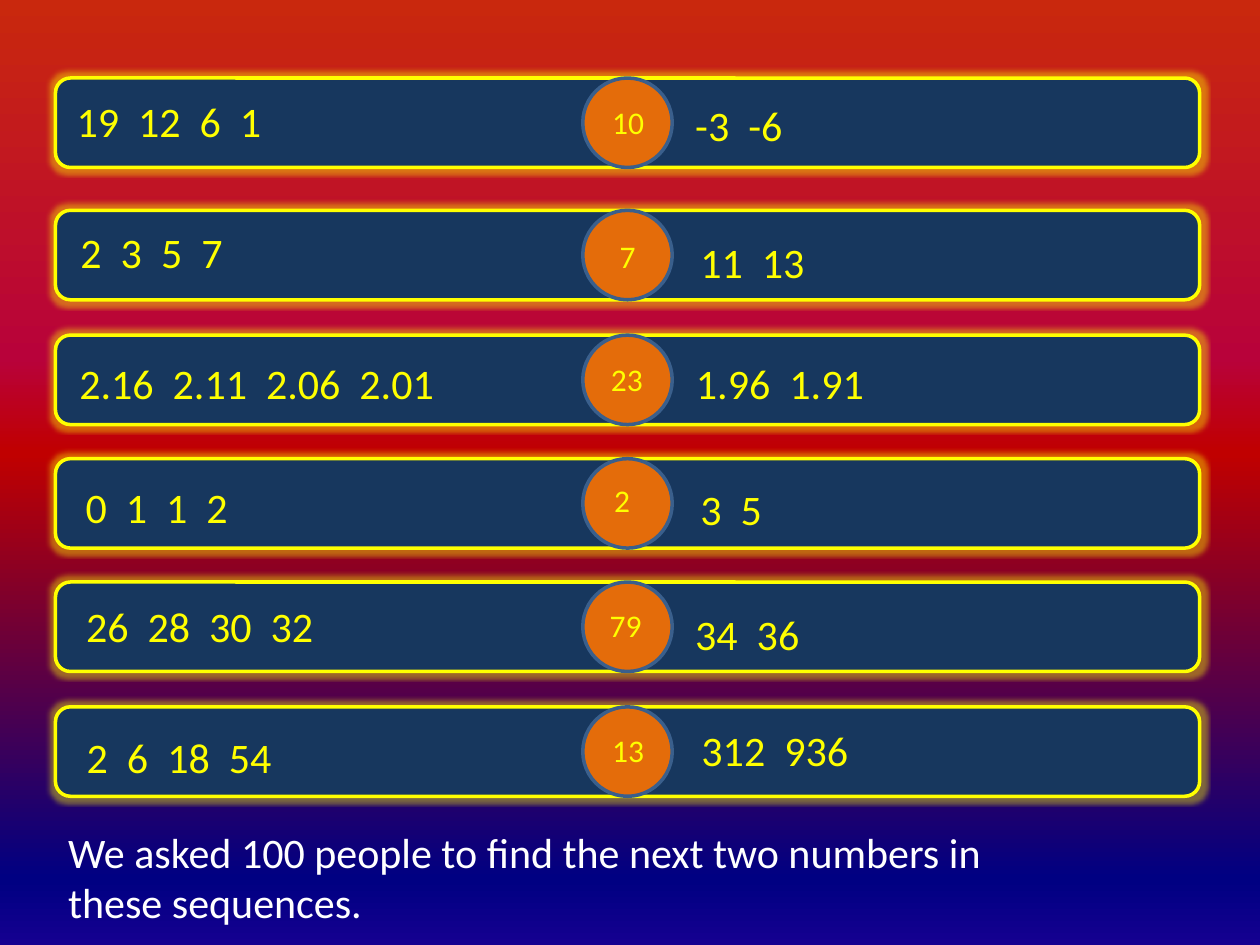
from lxml import etree
from pptx import Presentation
from pptx.dml.color import RGBColor
from pptx.enum.shapes import MSO_SHAPE
from pptx.enum.text import MSO_ANCHOR, MSO_AUTO_SIZE, PP_ALIGN
from pptx.oxml.ns import qn
from pptx.util import Pt

BAR, DOT = MSO_SHAPE.ROUNDED_RECTANGLE, MSO_SHAPE.OVAL
TOP, LEFT, NONE = MSO_ANCHOR.TOP, PP_ALIGN.LEFT, MSO_AUTO_SIZE.NONE

THEME = {
    "font": "Calibri", "big": 24, "small": 18,
    "text": "FFFF00", "note": "FFFFFF",
    "bar": "17375E", "edge": "FFFF00", "dot": "E46C0A", "ring": "3A5F8C",
    "stops": [(0, "C9280D"), (38, "B8023A"), (48, "C00000"),
              (93, "000082"), (100, "150090")],
}

NOTE = "We asked 100 people to find the next two numbers in these sequences."
# Each text is (wording, left, top, width).
ROWS = [
    (44.6, ("19  12  6  1", 36.7, 51.1, 136), ("10", 342.7, 55.4, 34),
     ("-3  -6", 390.2, 53.3, 134)),
    (120.2, ("2  3  5  7", 38.9, 126, 106), ("7", 347, 131.8, 34),
     ("11  13", 393.1, 131.8, 86)),
    (191.5, ("2.16  2.11  2.06  2.01", 38.2, 200.9, 220), ("23", 342, 202.3, 34),
     ("1.96  1.91", 390.6, 200.9, 145)),
    (262.1, ("0  1  1  2", 41.8, 271.4, 112), ("2", 343.9, 271.4, 34),
     ("3  5", 393.1, 272.9, 52)),
    (332.6, ("26  28  30  32", 42.1, 339.8, 182), ("79", 341.3, 342.7, 34),
     ("34  36", 390.2, 344.2, 134)),
    (403.9, ("2  6  18  54", 42.5, 414.7, 153), ("13", 342.7, 414, 34),
     ("312  936", 393.8, 410.4, 119)),
]
EDGE, WIDE, HIGH, MID = 31.7, 653.8, 51.1, 333


def paint(slide):
    fill = slide.background.fill
    fill.gradient()
    fill.gradient_angle = 270
    stops = next(slide.element.iter(qn("a:gsLst")))
    for old in list(stops):
        stops.remove(old)
    for pos, tint in THEME["stops"]:
        stop = etree.SubElement(stops, qn("a:gs"), pos=str(pos * 1000))
        etree.SubElement(stop, qn("a:srgbClr"), val=tint)


def block(slide, kind, left, top, width, fill, line):
    shape = slide.shapes.add_shape(kind, Pt(left), Pt(top), Pt(width), Pt(HIGH))
    shape.shadow.inherit = False
    shape.fill.solid()
    shape.fill.fore_color.rgb = RGBColor.from_string(THEME[fill])
    shape.line.color.rgb = RGBColor.from_string(THEME[line])
    shape.line.width = Pt(2)
    return shape


def glow(shape):
    halo = etree.SubElement(next(shape.element.iter(qn("a:effectLst"))),
                            qn("a:glow"), rad=str(Pt(5)))
    tint = etree.SubElement(halo, qn("a:srgbClr"), val=THEME["edge"])
    etree.SubElement(tint, qn("a:alpha"), val="40000")


def write(shape, text, size, tint):
    frame = shape.text_frame
    frame.text = text
    para = frame.paragraphs[0]
    look = {
        frame: {"word_wrap": True, "auto_size": NONE, "vertical_anchor": TOP},
        para: {"alignment": LEFT},
        para.runs[0].font: {"name": THEME["font"], "size": Pt(THEME[size])},
    }
    for part, values in look.items():
        for name, value in values.items():
            setattr(part, name, value)
    para.runs[0].font.color.rgb = RGBColor.from_string(THEME[tint])


def place(shape, left, top, width, height):
    spots = {"left": left, "top": top, "width": width, "height": height}
    for name, value in spots.items():
        setattr(shape, name, Pt(value))


def main():
    deck = Presentation()
    deck.slide_width, deck.slide_height = Pt(720), Pt(540)
    slide = deck.slides.add_slide(deck.slide_layouts[5])
    paint(slide)
    for top, *texts in ROWS:
        bar = block(slide, BAR, EDGE, top, WIDE, "bar", "edge")
        glow(bar)
        block(slide, DOT, MID, top, HIGH, "dot", "ring")
        for (text, left, high, width), size, tall in zip(
                texts, ("big", "small", "big"), (36, 29, 36)):
            box = slide.shapes.add_textbox(Pt(left), Pt(high), Pt(width), Pt(tall))
            write(box, text, size, "text")
    title = slide.shapes.title
    place(title, EDGE, 468.7, 589.7, 65.5)
    write(title, NOTE, "big", "note")
    deck.save("out.pptx")


if __name__ == "__main__":
    main()
